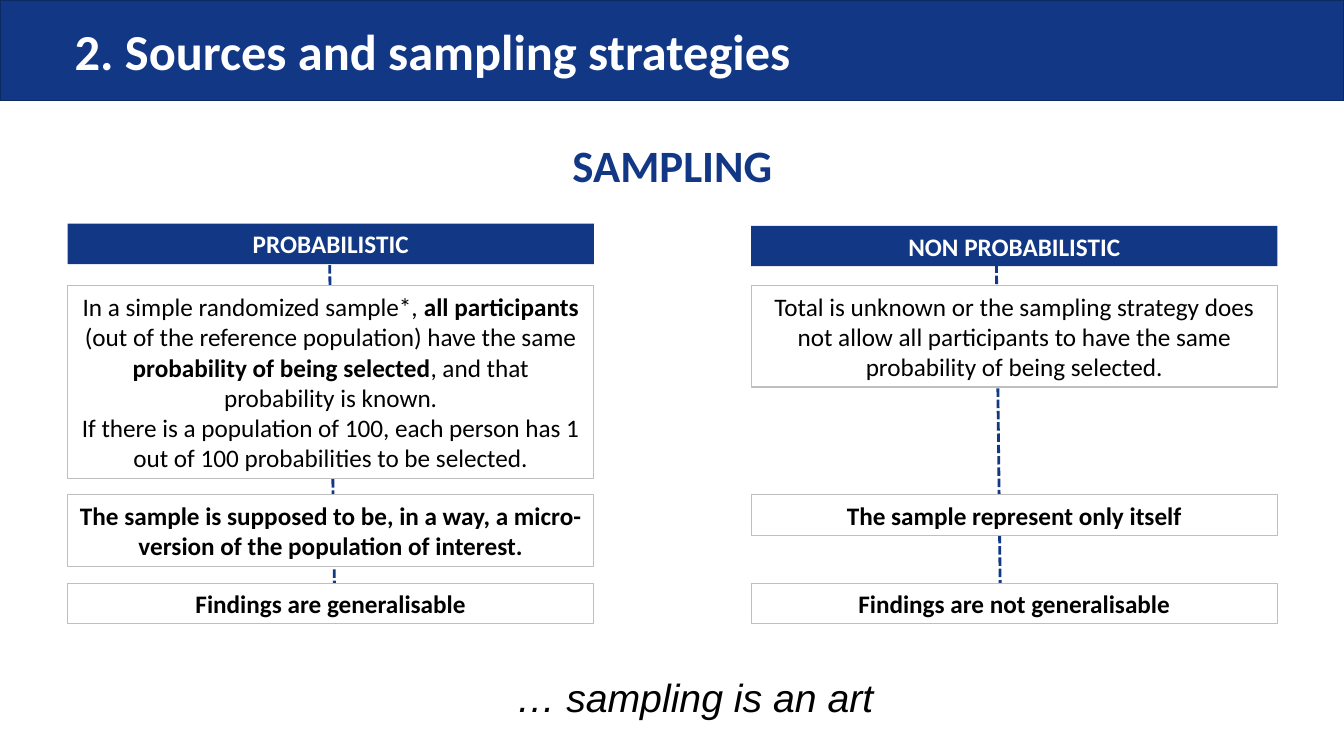
from lxml.etree import SubElement
from pptx import Presentation
from pptx.dml.color import RGBColor
from pptx.enum.dml import MSO_LINE
from pptx.enum.shapes import MSO_CONNECTOR, MSO_SHAPE
from pptx.enum.text import MSO_ANCHOR, MSO_AUTO_SIZE, PP_ALIGN
from pptx.oxml.ns import qn
from pptx.util import Inches, Pt

COLORS = {
    "blue": "123885",
    "navy": "0D2962",
    "gray": "BFBFBF",
    "white": "FFFFFF",
    "black": "000000",
}
COLUMN_WIDTH = 5.22
LEFT_COLUMN, RIGHT_COLUMN = 0.67, 7.45
DEFINITION_TOP, SAMPLE_TOP, FINDINGS_TOP = 2.83, 4.91, 5.79
ONE_LINE, TWO_LINES, THREE_LINES, SIX_LINES = 0.4, 0.71, 1.01, 1.92


def color(name):
    return RGBColor.from_string(COLORS[name])


def format_font(font, size, color_name, bold=False, italic=False, name="Calibri"):
    font.name = name
    font.size = Pt(size)
    font.bold = bold
    font.italic = italic
    font.color.rgb = color(color_name)


def write_paragraphs(frame, paragraphs, size, color_name, **style):
    """Each paragraph is a list of (text, bold) spans."""
    frame.word_wrap = True
    frame.auto_size = MSO_AUTO_SIZE.SHAPE_TO_FIT_TEXT
    for index, spans in enumerate(paragraphs):
        para = frame.paragraphs[0] if index == 0 else frame.add_paragraph()
        para.alignment = PP_ALIGN.CENTER
        for text, bold in spans:
            span = para.add_run()
            span.text = text
            format_font(span.font, size, color_name, bold, **style)


def add_rectangle(slide, left, top, width, height, fill, line=None, weight=0.75):
    box = slide.shapes.add_shape(MSO_SHAPE.RECTANGLE, Inches(left), Inches(top),
                                 Inches(width), Inches(height))
    box.shadow.inherit = False
    box.fill.solid()
    box.fill.fore_color.rgb = color(fill)
    if line:
        box.line.color.rgb = color(line)
        box.line.width = Pt(weight)
    else:
        box.line.fill.background()
    return box


def add_header(slide, left, top, text):
    box = add_rectangle(slide, left, top, COLUMN_WIDTH, ONE_LINE, "blue")
    write_paragraphs(box.text_frame, [[(text, True)]], 18, "white")


def add_card(slide, left, top, height, paragraphs):
    box = add_rectangle(slide, left, top, COLUMN_WIDTH, height, "white", "gray")
    write_paragraphs(box.text_frame, paragraphs, 18, "black")


def add_caption(slide, left, top, width, height, text, size, color_name, **style):
    box = slide.shapes.add_textbox(Inches(left), Inches(top), Inches(width), Inches(height))
    write_paragraphs(box.text_frame, [[(text, style.pop("bold", False))]],
                     size, color_name, **style)


def add_dashed_line(slide, x1, y1, x2, y2):
    line = slide.shapes.add_connector(MSO_CONNECTOR.STRAIGHT, Inches(x1), Inches(y1),
                                      Inches(x2), Inches(y2))
    line.line.color.rgb = color("blue")
    line.line.width = Pt(2)
    line.line.dash_style = MSO_LINE.SQUARE_DOT
    SubElement(line._element.spPr, qn("a:effectLst"))


def place_title(slide, text):
    title = slide.shapes.title
    title.left, title.top = Inches(0.64), Inches(0.13)
    title.width, title.height = Inches(10.27), Inches(0.82)
    frame = title.text_frame
    frame.text = text
    frame.word_wrap = True
    frame.auto_size = MSO_AUTO_SIZE.NONE
    frame.vertical_anchor = MSO_ANCHOR.MIDDLE
    para = frame.paragraphs[0]
    para.alignment = PP_ALIGN.LEFT
    para.line_spacing = 0.9
    format_font(para.runs[0].font, 36, "white", bold=True)
    # Bring the title in front of the band
    title._element.getparent().append(title._element)


def main():
    deck = Presentation()
    deck.slide_width, deck.slide_height = Inches(13.33), Inches(7.5)
    slide = deck.slides.add_slide(deck.slide_layouts[5])

    # Title band
    add_rectangle(slide, 0, 0, 13.33, 1, "blue", "navy", 1)
    place_title(slide, "2. Sources and sampling strategies")
    add_caption(slide, 0.67, 1.32, 12, 0.64, "SAMPLING", 32, "blue", bold=True)

    # Dashed lines behind the cards
    add_dashed_line(slide, 3.27, 2.63, 3.32, 6.01)
    add_dashed_line(slide, 9.88, 2.4, 9.92, 5.79)

    # Probabilistic column
    add_header(slide, LEFT_COLUMN, 2.22, "PROBABILISTIC")
    add_card(slide, LEFT_COLUMN, DEFINITION_TOP, SIX_LINES, [
        [("In a simple randomized sample*, ", False),
         ("all participants ", True),
         ("(out of the reference population) have the same ", False),
         ("probability of being selected", True),
         (", and that probability is known.", False)],
        [("If there is a population of 100, each person has 1 out of 100 "
          "probabilities to be selected.", False)],
    ])
    add_card(slide, LEFT_COLUMN, SAMPLE_TOP, TWO_LINES, [
        [("The sample is supposed to be, in a way, a micro-version of the "
          "population of interest.", True)]])
    add_card(slide, LEFT_COLUMN, FINDINGS_TOP, ONE_LINE,
             [[("Findings are generalisable", True)]])

    # Non probabilistic column
    add_header(slide, RIGHT_COLUMN, 2.24, "NON PROBABILISTIC")
    add_card(slide, RIGHT_COLUMN, DEFINITION_TOP, THREE_LINES, [
        [("Total is unknown or the sampling strategy does not allow all "
          "participants to have the same probability of being selected.", False)]])
    add_card(slide, RIGHT_COLUMN, SAMPLE_TOP, ONE_LINE,
             [[("The sample represent only itself", True)]])
    add_card(slide, RIGHT_COLUMN, FINDINGS_TOP, ONE_LINE,
             [[("Findings are not generalisable", True)]])

    # Closing remark
    add_caption(slide, 1.28, 6.63, 11.22, 0.57, "… sampling is an art", 28, "black",
                italic=True, name="Arial")

    deck.save("out.pptx")


if __name__ == "__main__":
    main()
